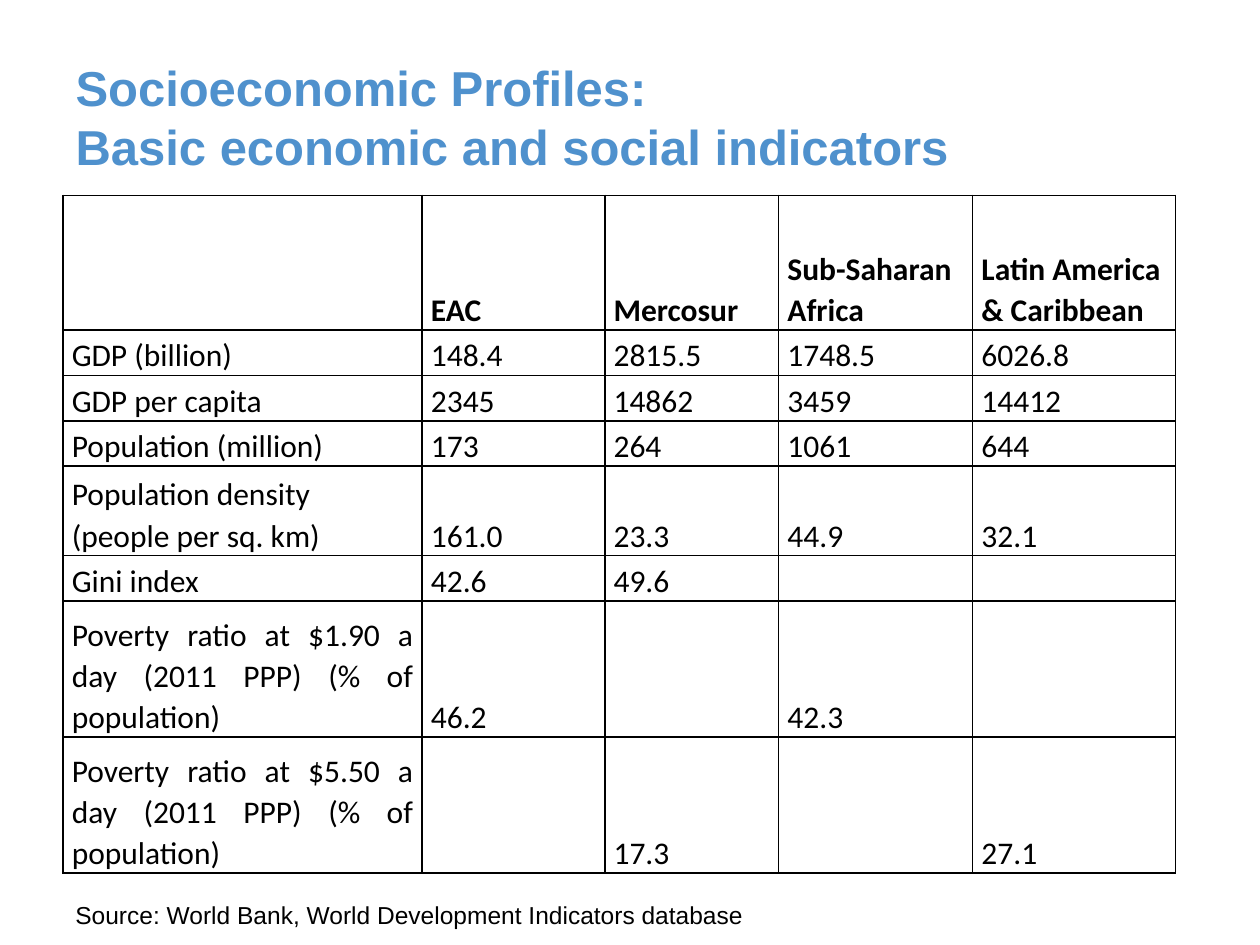
from lxml import etree
from pptx import Presentation
from pptx.dml.color import RGBColor
from pptx.enum.text import MSO_ANCHOR as Anchor, MSO_AUTO_SIZE as Fit, PP_ALIGN as Align
from pptx.oxml import parse_xml
from pptx.oxml.ns import nsdecls
from pptx.util import Inches, Pt

BLUE = RGBColor(0x4F, 0x91, 0xCD)
BLACK = RGBColor(0, 0, 0)
WHITE = RGBColor(0xFF, 0xFF, 0xFF)

COLS = [2.85, 1.45, 1.38, 1.54, 1.61]
HIGH = [1.07, 0.36, 0.36, 0.36, 0.71, 0.36, 1.08, 1.08]
DATA = [
    ["", "EAC", "Mercosur", "Sub-Saharan Africa", "Latin America & Caribbean"],
    ["GDP (billion)", "148.4", "2815.5", "1748.5", "6026.8"],
    ["GDP per capita", "2345", "14862", "3459", "14412"],
    ["Population (million)", "173", "264", "1061", "644"],
    ["Population density (people per sq. km)", "161.0", "23.3", "44.9", "32.1"],
    ["Gini index", "42.6", "49.6", "", ""],
    ["Poverty ratio at $1.90 a day (2011 PPP) (% of population)", "46.2", "", "42.3", ""],
    ["Poverty ratio at $5.50 a day (2011 PPP) (% of population)", "", "17.3", "", "27.1"],
]


def style(font, name, size, color, bold=False):
    font.name, font.size, font.bold = name, Pt(size), bold
    font.color.rgb = color


def add_title(slide, text):
    title = slide.shapes.title
    title.left, title.top = Inches(0.5), Inches(0.3)
    title.width, title.height = Inches(9), Inches(1.25)
    frame = title.text_frame
    frame.text = text
    frame.auto_size = Fit.NONE
    frame.vertical_anchor = Anchor.MIDDLE
    para = frame.paragraphs[0]
    para.alignment = Align.LEFT
    for run in para.runs:
        style(run.font, "Arial", 28, BLUE, True)


def add_edges(cell):
    # Borders come before the fill in the cell properties
    props = cell._tc.get_or_add_tcPr()
    for spot, side in enumerate("LRTB"):
        edge = parse_xml(f'<a:ln{side} {nsdecls("a")} w="12700"/>')
        fill = etree.SubElement(edge, edge.tag.split("}")[0] + "}solidFill")
        color = etree.SubElement(fill, fill.tag.replace("solidFill", "srgbClr"))
        color.set("val", str(BLACK))
        props.insert(spot, edge)


def fill_cell(cell, text, head, label):
    cell.margin_left = cell.margin_right = Inches(0.07)
    cell.margin_top = cell.margin_bottom = 0
    cell.vertical_anchor = Anchor.BOTTOM
    if label:
        cell.fill.background()
    else:
        cell.fill.solid()
        cell.fill.fore_color.rgb = WHITE
    add_edges(cell)
    if not text:
        return
    cell.text_frame.text = text
    para = cell.text_frame.paragraphs[0]
    para.line_spacing = 1.07
    ragged = head or text.startswith("Population density")
    para.alignment = Align.LEFT if ragged else Align.JUSTIFY
    style(para.runs[0].font, "Calibri", 18, BLACK, head)


def add_grid(slide):
    grid = slide.shapes.add_table(
        len(HIGH), len(COLS), Inches(0.5), Inches(1.55),
        Inches(sum(COLS)), Inches(sum(HIGH))).table
    grid.horz_banding = False
    for col, wide in zip(grid.columns, COLS):
        col.width = Inches(wide)
    for r, (row, high) in enumerate(zip(grid.rows, HIGH)):
        row.height = Inches(high)
        for c, text in enumerate(DATA[r]):
            fill_cell(grid.cell(r, c), text, r == 0, c == 0)


def add_source(slide, text):
    box = slide.shapes.add_textbox(Inches(0.5), Inches(7.09), Inches(7), Inches(0.34))
    frame = box.text_frame
    frame.word_wrap = True
    frame.auto_size = Fit.SHAPE_TO_FIT_TEXT
    frame.text = text
    style(frame.paragraphs[0].runs[0].font, "Arial", 14, BLACK)


def main():
    deck = Presentation()
    deck.slide_width, deck.slide_height = Inches(10), Inches(7.5)
    slide = deck.slides.add_slide(deck.slide_layouts[5])
    # Heading, indicator table, source line
    add_title(slide, "Socioeconomic Profiles:\vBasic economic and social indicators")
    add_grid(slide)
    add_source(slide, "Source: World Bank, World Development Indicators database")
    deck.save("out.pptx")


if __name__ == "__main__":
    main()
